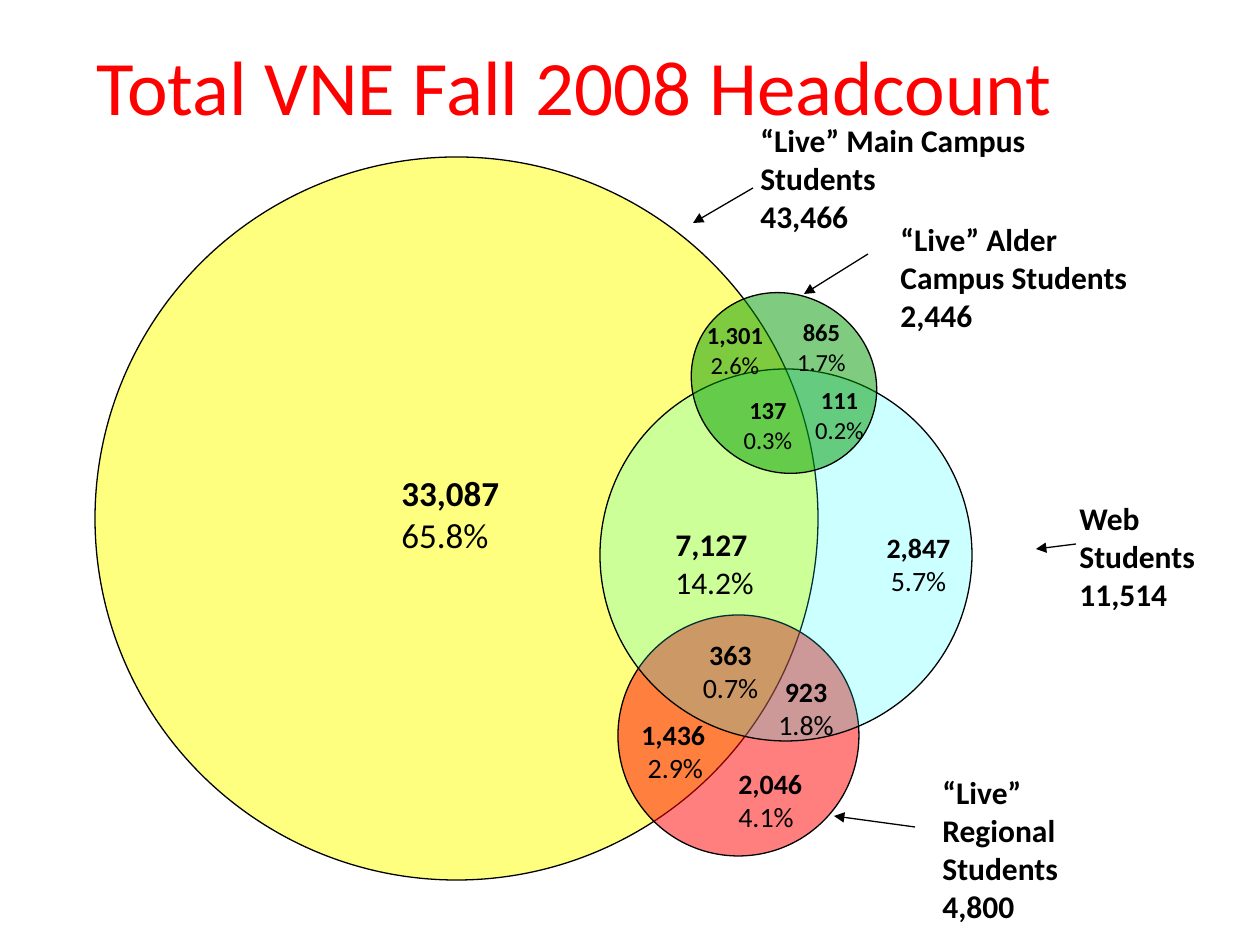
from lxml import etree
from pptx import Presentation
from pptx import util as u
from pptx.dml.color import RGBColor
from pptx.enum import shapes, text
from pptx.oxml.ns import qn

PX = 914400 / 126
FONT = "Calibri"
BLACK = RGBColor(0, 0, 0)
RED = RGBColor(255, 0, 0)
YELLOW = RGBColor(255, 255, 0)
CYAN = RGBColor(0, 255, 255)
GREEN = RGBColor(0, 153, 0)
LEFT = text.PP_ALIGN.LEFT
CENTER = text.PP_ALIGN.CENTER


def px(*lengths):
    return [u.Emu(round(length * PX)) for length in lengths]


def style(para, size, color, bold, align):
    para.alignment = align
    para.font.name = FONT
    para.font.size = u.Pt(size)
    para.font.bold = bold
    para.font.color.rgb = color


def add_title(page, words):
    title = page.shapes.title
    title.left, title.top, title.width, title.height = px(84, 32, 1124, 136)
    title.text = words
    title.text_frame.vertical_anchor = text.MSO_ANCHOR.TOP
    style(title.text_frame.paragraphs[0], 44, RED, False, LEFT)


def add_circle(page, place, color, opacity, rotation=0):
    circle = page.shapes.add_shape(shapes.MSO_SHAPE.OVAL, *px(*place))
    circle.shadow.inherit = False
    circle.rotation = rotation
    circle.fill.solid()
    circle.fill.fore_color.rgb = color
    fill_color = circle.fill._xPr.find(qn("a:solidFill"))[0]
    etree.SubElement(fill_color, qn("a:alpha"), val=str(opacity * 1000))
    circle.line.color.rgb = BLACK
    circle.line.width = u.Pt(0.75)


def add_text(page, place, lines, size, bolds, align=LEFT):
    frame = page.shapes.add_textbox(*px(*place)).text_frame
    frame.word_wrap = True
    frame.text = "\n".join(lines)
    for para, bold in zip(frame.paragraphs, bolds):
        style(para, size, BLACK, bold, align)


def add_share(page, place, count, percent, size, align=CENTER):
    add_text(page, place, (count, percent), size, (True, False), align)


def add_callout(page, place, group, total, arrow):
    add_text(page, place, (group, total), 18, (True, True))
    line = page.shapes.add_connector(shapes.MSO_CONNECTOR.STRAIGHT, *px(*arrow))
    line.line.color.rgb = BLACK
    line.line.width = u.Pt(0.75)
    etree.SubElement(line.line._get_or_add_ln(), qn("a:tailEnd"), type="triangle")
    etree.SubElement(line._element.spPr, qn("a:effectLst"))


def main():
    deck = Presentation()
    deck.slide_width, deck.slide_height = px(1260, 945)
    page = deck.slides.add_slide(deck.slide_layouts[5])
    add_title(page, "Total VNE Fall 2008 Headcount")

    add_circle(page, (95, 157, 723, 723), YELLOW, 50)
    add_circle(page, (618, 615, 241, 241), RED, 50)
    add_share(page, (389, 465, 151, 53), "33,087", "65.8%", 20, LEFT)
    add_circle(page, (600, 369, 372, 372), CYAN, 20)
    for place, count, percent, size, align in (
        ((663, 519, 136, 53), "7,127", "14.2%", 18, LEFT),
        ((839, 524, 159, 53), "2,847", "5.7%", 16, CENTER),
        ((669, 631, 123, 53), "363", "0.7%", 16, CENTER),
        ((752, 668, 108, 53), "923", "1.8%", 16, CENTER),
        ((629, 711, 111, 53), "1,436", " 2.9%", 16, LEFT),
        ((726, 760, 113, 53), "2,046", "4.1%", 16, LEFT),
    ):
        add_share(page, place, count, percent, size, align)

    add_circle(page, (689, 295, 190, 176), GREEN, 50, 35)
    for place, count, percent in (
        ((650, 314, 170, 53), "1,301", "2.6%"),
        ((702, 389, 132, 53), "137", "0.3%"),
        ((776, 311, 91, 53), "865", "1.7%"),
        ((791, 379, 97, 53), "111", "0.2%"),
    ):
        add_share(page, place, count, percent, 14)

    for place, group, total, arrow in (
        ((748, 115, 305, 45), "“Live” Main Campus Students", "43,466", (753, 188, 693, 223)),
        ((888, 214, 292, 55), "“Live” Alder Campus Students", "2,446", (868, 254, 804, 294)),
        ((1067, 493, 170, 54), "Web Students", "11,514", (1076, 544, 1036, 549)),
        ((930, 767, 184, 73), "“Live” Regional Students", "4,800", (915, 827, 834, 816)),
    ):
        add_callout(page, place, group, total, arrow)

    deck.save("out.pptx")


if __name__ == "__main__":
    main()
